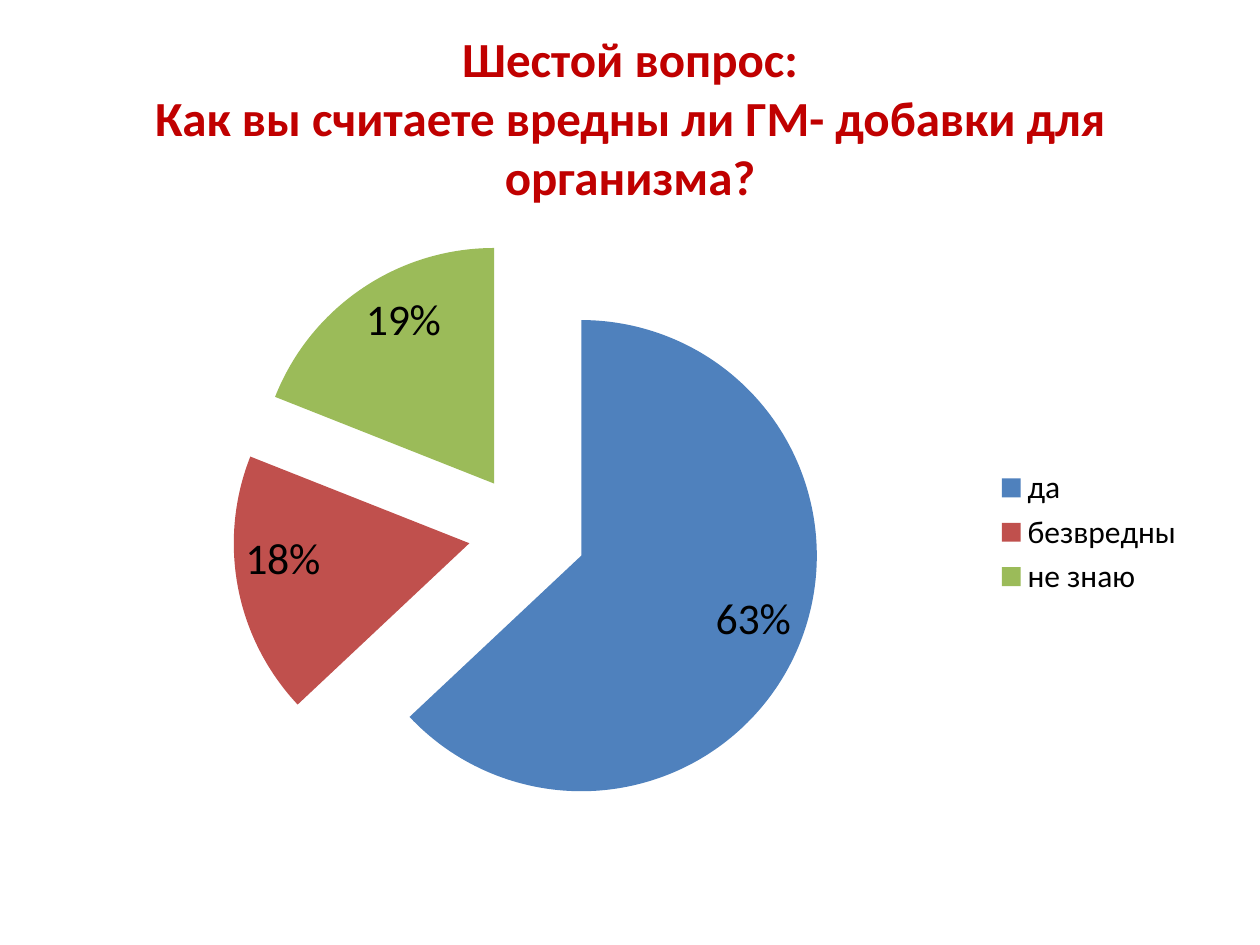
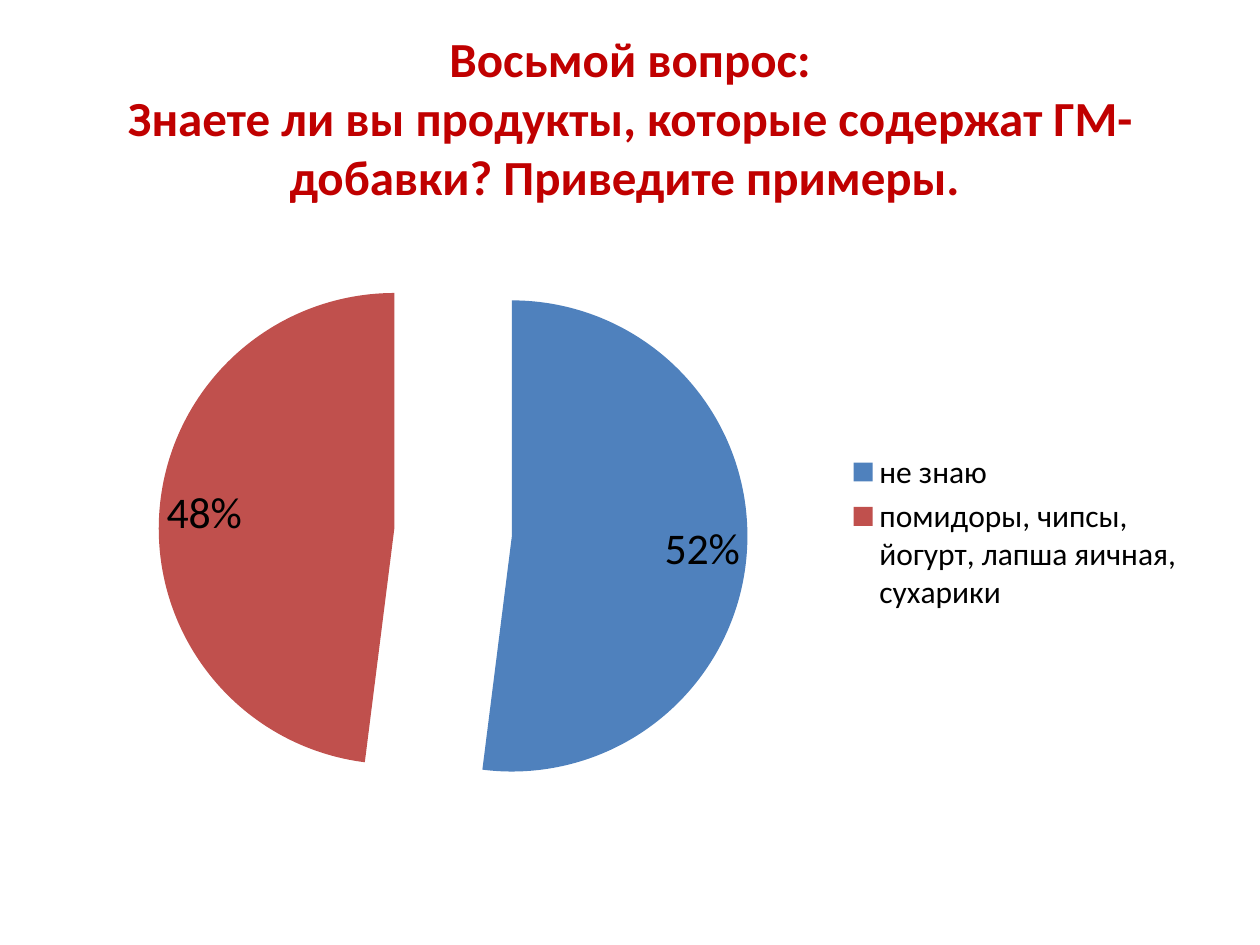
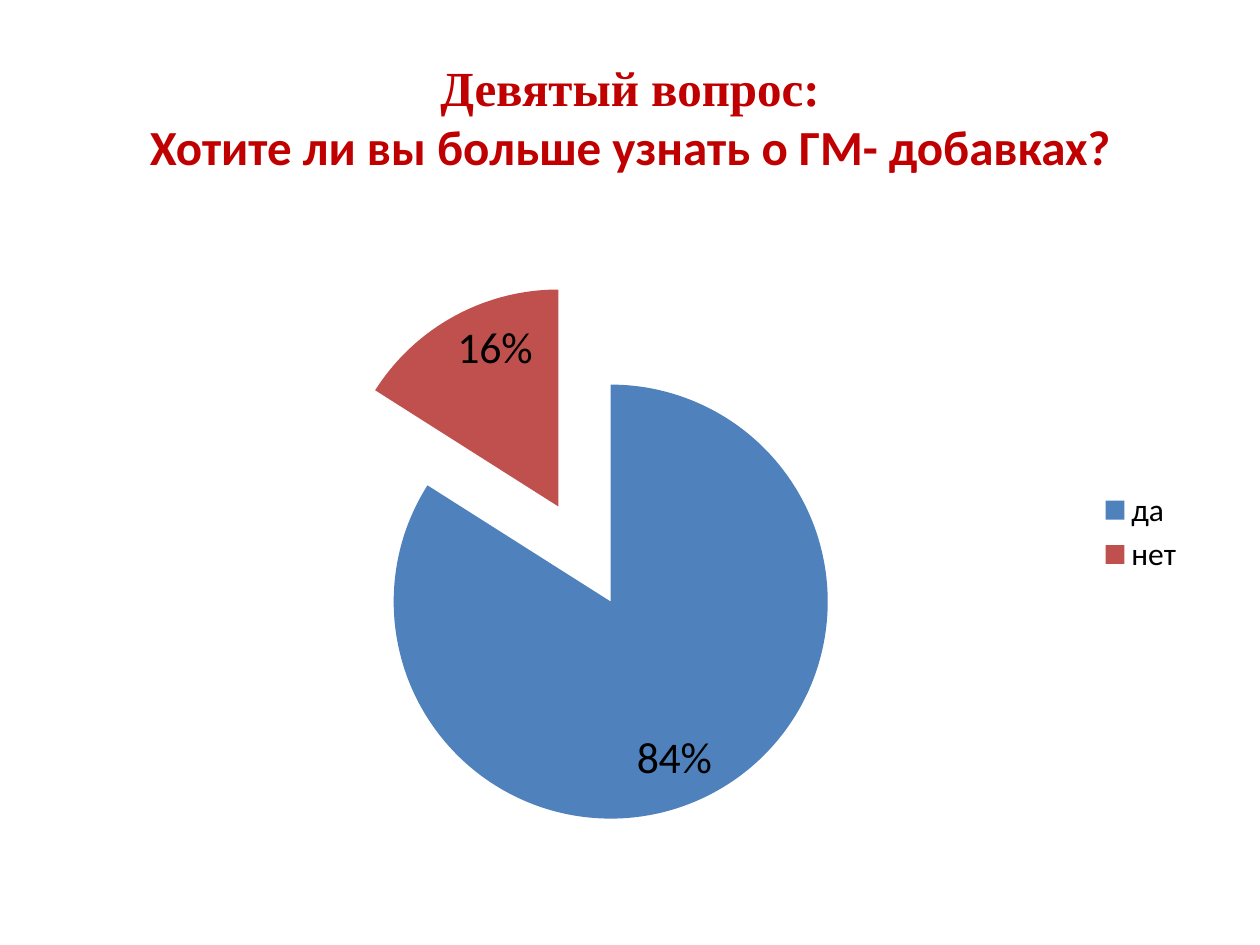
from lxml import etree
from pptx import Presentation
from pptx import util as u
from pptx.chart.data import CategoryChartData
from pptx.dml.color import RGBColor
from pptx.enum import chart as ch
from pptx.enum import text as tx

RED = RGBColor(0xC0, 0x00, 0x00)
BLACK = RGBColor(0, 0, 0)
WHITE = RGBColor(0xFF, 0xFF, 0xFF)
SLICES = (RGBColor(0x4F, 0x81, 0xBD), RGBColor(0xC0, 0x50, 0x4D),
          RGBColor(0x9B, 0xBB, 0x59))
SANS, SERIF = "Calibri", "Times New Roman"
LEFT, WIDTH = u.Inches(0.5), u.Inches(9)
NS = "http://schemas.openxmlformats.org/drawingml/2006/chart"


def style(font, size, color, name=SANS, bold=False):
    font.size, font.name, font.bold = u.Pt(size), name, bold
    font.color.rgb = color


def write(par, words, **form):
    run = par.add_run()
    run.text = words
    style(run.font, **form)


def place(chart, x, y, w, h):
    """Fix the plot area, in parts of the chart's size."""
    area = chart._chartSpace.chart.plotArea
    for old in area.findall(f"{{{NS}}}layout"):
        area.remove(old)
    layout = etree.Element(f"{{{NS}}}layout")
    manual = etree.SubElement(layout, f"{{{NS}}}manualLayout")
    rules = dict(layoutTarget="inner", xMode="edge", yMode="edge",
                 x=x, y=y, w=w, h=h)
    for tag, val in rules.items():
        etree.SubElement(manual, f"{{{NS}}}{tag}", val=str(val))
    area.insert(0, layout)


class Deck:
    def __init__(self):
        self.prs = Presentation()
        self.prs.slide_width = u.Inches(10)
        self.prs.slide_height = u.Inches(7.5)
        self.slide = None

    def start(self):
        self.slide = self.prs.slides.add_slide(self.prs.slide_layouts[6])
        fill = self.slide.background.fill
        fill.solid()
        fill.fore_color.rgb = WHITE

    def title(self, head, ask, face=SANS):
        box = self.slide.shapes.add_textbox(
            LEFT, u.Inches(0.3), WIDTH, u.Inches(1.25))
        frame = box.text_frame
        frame.word_wrap = True
        frame.vertical_anchor = tx.MSO_ANCHOR.MIDDLE
        par = frame.paragraphs[0]
        par.alignment = tx.PP_ALIGN.CENTER
        form = dict(size=28, color=RED, bold=True)
        write(par, head, name=face, **form)
        par.add_line_break()
        write(par, ask, **form)

    def pie(self, shares, plot=None):
        data = CategoryChartData(number_format="0%")
        data.categories = list(shares)
        data.add_series("Series 1", list(shares.values()))
        chart = self.slide.shapes.add_chart(
            ch.XL_CHART_TYPE.PIE, LEFT, u.Inches(1.75),
            WIDTH, u.Inches(4.95), data).chart
        chart.has_title = False
        style(chart.font, 18, BLACK)
        chart.has_legend = True
        chart.legend.position = ch.XL_LEGEND_POSITION.RIGHT
        chart.legend.include_in_layout = False
        if plot:
            place(chart, *plot)

        # Slice colours and the gap between slices
        pie = chart.plots[0]
        pie.vary_by_categories = True
        series = pie.series[0]
        for i, color in enumerate(SLICES[:len(shares)]):
            fill = series.points[i].format.fill
            fill.solid()
            fill.fore_color.rgb = color
        gap = etree.Element(f"{{{NS}}}explosion", val="25")
        series._element.find(f"{{{NS}}}dPt").addprevious(gap)

        # Value labels
        pie.has_data_labels = True
        labels = pie.data_labels
        labels.show_value = True
        labels.show_percentage = False
        labels.number_format, labels.number_format_is_linked = "0%", False
        labels.position = ch.XL_LABEL_POSITION.INSIDE_END
        style(labels.font, 25, BLACK)


def main():
    deck = Deck()

    # Question six
    deck.start()
    deck.title("Шестой вопрос:",
               "Как вы считаете вредны ли ГМ- добавки для организма?")
    deck.pie({"да": 0.63, "безвредны": 0.18, "не знаю": 0.19})

    # Question eight
    deck.start()
    deck.title("Восьмой вопрос:",
               "Знаете ли вы продукты, которые содержат ГМ- добавки? "
               "Приведите примеры. ")
    deck.pie({"не знаю": 0.52,
              "помидоры, чипсы, йогурт, лапша яичная, сухарики": 0.48})

    # Question nine
    deck.start()
    deck.title("Девятый вопрос:",
               "Хотите ли вы больше узнать о ГМ- добавках?", face=SERIF)
    deck.pie({"да": 0.84, "нет": 0.16}, plot=(0.22, 0.1, 0.48, 0.87))

    deck.prs.save("out.pptx")


if __name__ == "__main__":
    main()
